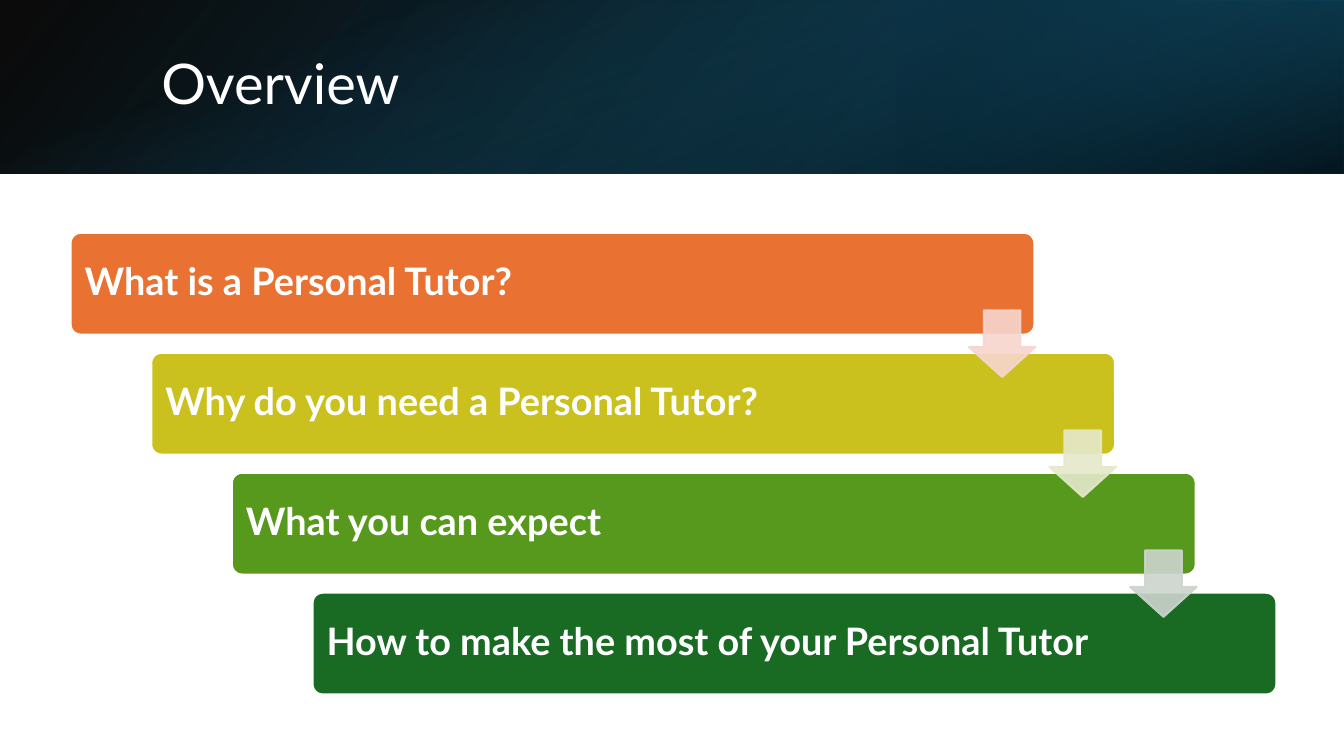
from dataclasses import dataclass

from lxml import etree
from pptx import Presentation
from pptx import util as u
from pptx.dml.color import RGBColor
from pptx.enum import shapes, text
from pptx.oxml.ns import qn


@dataclass(frozen=True)
class Theme:
    font: str = "Lato"
    title_size: int = 40
    bar_size: int = 27
    white: str = "FFFFFF"
    black: str = "000000"
    teal: str = "156082"
    deep_teal: str = "104862"
    night_teal: str = "0B3041"
    bars: tuple = ("E97132", "CBC11E", "56991D", "196B24")
    arrows: tuple = ("F7D5CE", "E5E8CA", "CCD4CD")


THEME = Theme()
TOPICS = (
    "What is a Personal Tutor?",
    "Why do you need a Personal Tutor?",
    "What you can expect",
    "How to make the most of your Personal Tutor",
)
# Each topic sits one step right of and below the one before
STEP_X, STEP_Y = 0.8, 1.19


def set_alpha(color_element, percent):
    alpha = etree.SubElement(color_element, qn("a:alpha"))
    alpha.set("val", str(percent * 1000))


def add_plain_shape(slide, kind, left, top, width, height):
    shape = slide.shapes.add_shape(
        kind, u.Inches(left), u.Inches(top), u.Inches(width), u.Inches(height))
    shape.shadow.inherit = False
    return shape


def add_gradient_band(slide, box, stops, angle, rotation=0, flip=False):
    """Stops are (position %, colour, opacity %); the angle runs clockwise."""
    band = add_plain_shape(slide, shapes.MSO_SHAPE.RECTANGLE, *box)
    band.rotation = rotation
    if flip:
        band._element.spPr.xfrm.set("flipH", "1")
    band.line.fill.background()
    band.fill.gradient()
    band.fill.gradient_angle = 360 - angle
    for stop, (position, color, opacity) in zip(band.fill.gradient_stops, stops):
        stop.position = position / 100
        stop.color.rgb = RGBColor.from_string(color)
    for element, (_, _, opacity) in zip(
            band._element.spPr.iter(qn("a:srgbClr")), stops):
        set_alpha(element, opacity)


def format_text(frame, size, bold=False):
    frame.word_wrap = True
    frame.auto_size = text.MSO_AUTO_SIZE.NONE
    frame.vertical_anchor = text.MSO_ANCHOR.MIDDLE
    for paragraph in frame.paragraphs:
        paragraph.alignment = text.PP_ALIGN.LEFT
        paragraph.line_spacing = 0.9
        for run in paragraph.runs:
            run.font.name = THEME.font
            run.font.size = u.Pt(size)
            run.font.bold = bold
            run.font.color.rgb = RGBColor.from_string(THEME.white)


def paint(shape, fill, line):
    shape.fill.solid()
    shape.fill.fore_color.rgb = RGBColor.from_string(fill)
    shape.line.color.rgb = RGBColor.from_string(line)
    shape.line.width = u.Pt(1.5)


def add_topic_bar(slide, index, topic, color):
    bar = add_plain_shape(
        slide, shapes.MSO_SHAPE.ROUNDED_RECTANGLE,
        0.7 + index * STEP_X, 2.31 + index * STEP_Y, 9.56, 1.01)
    bar.adjustments[0] = 0.1
    paint(bar, color, THEME.white)
    bar.text_frame.text = topic
    bar.text_frame.margin_left = u.Inches(0.11)
    format_text(bar.text_frame, THEME.bar_size, bold=True)


def add_step_arrow(slide, index, color):
    arrow = add_plain_shape(
        slide, shapes.MSO_SHAPE.DOWN_ARROW,
        9.61 + index * STEP_X, 3.08 + index * STEP_Y, 0.66, 0.66)
    arrow.adjustments[0] = 0.55
    arrow.adjustments[1] = 0.45
    paint(arrow, color, color)
    for element in arrow._element.spPr.iter(qn("a:srgbClr")):
        set_alpha(element, 90)


def add_title(slide, wording):
    title = slide.shapes.title
    title.left, title.top = u.Inches(1.5), u.Inches(0.38)
    title.width, title.height = u.Inches(10.98), u.Inches(0.96)
    title.text_frame.text = wording
    format_text(title.text_frame, THEME.title_size)
    # Bring the title in front of the header bands
    slide.shapes._spTree.append(title._element)


def main():
    presentation = Presentation()
    presentation.slide_width = u.Inches(13.33)
    presentation.slide_height = u.Inches(7.5)
    slide = presentation.slides.add_slide(presentation.slide_layouts[5])

    # Header: three translucent gradients
    add_gradient_band(
        slide, (0, 0, 13.33, 1.72),
        ((0, THEME.black, 96), (100, THEME.deep_teal, 100)), 140, flip=True)
    add_gradient_band(
        slide, (8.89, 0, 4.44, 1.72),
        ((19, THEME.night_teal, 68), (100, THEME.teal, 79)), 320,
        rotation=180, flip=True)
    add_gradient_band(
        slide, (5.8, -5.8, 1.72, 13.33),
        ((23, THEME.teal, 0), (99, THEME.black, 74)), 340, rotation=90)
    add_title(slide, "Overview")

    # Staircase of topics, then the arrows over it
    for index, (topic, color) in enumerate(zip(TOPICS, THEME.bars)):
        add_topic_bar(slide, index, topic, color)
    for index, color in enumerate(THEME.arrows):
        add_step_arrow(slide, index, color)

    presentation.save("out.pptx")


if __name__ == "__main__":
    main()
